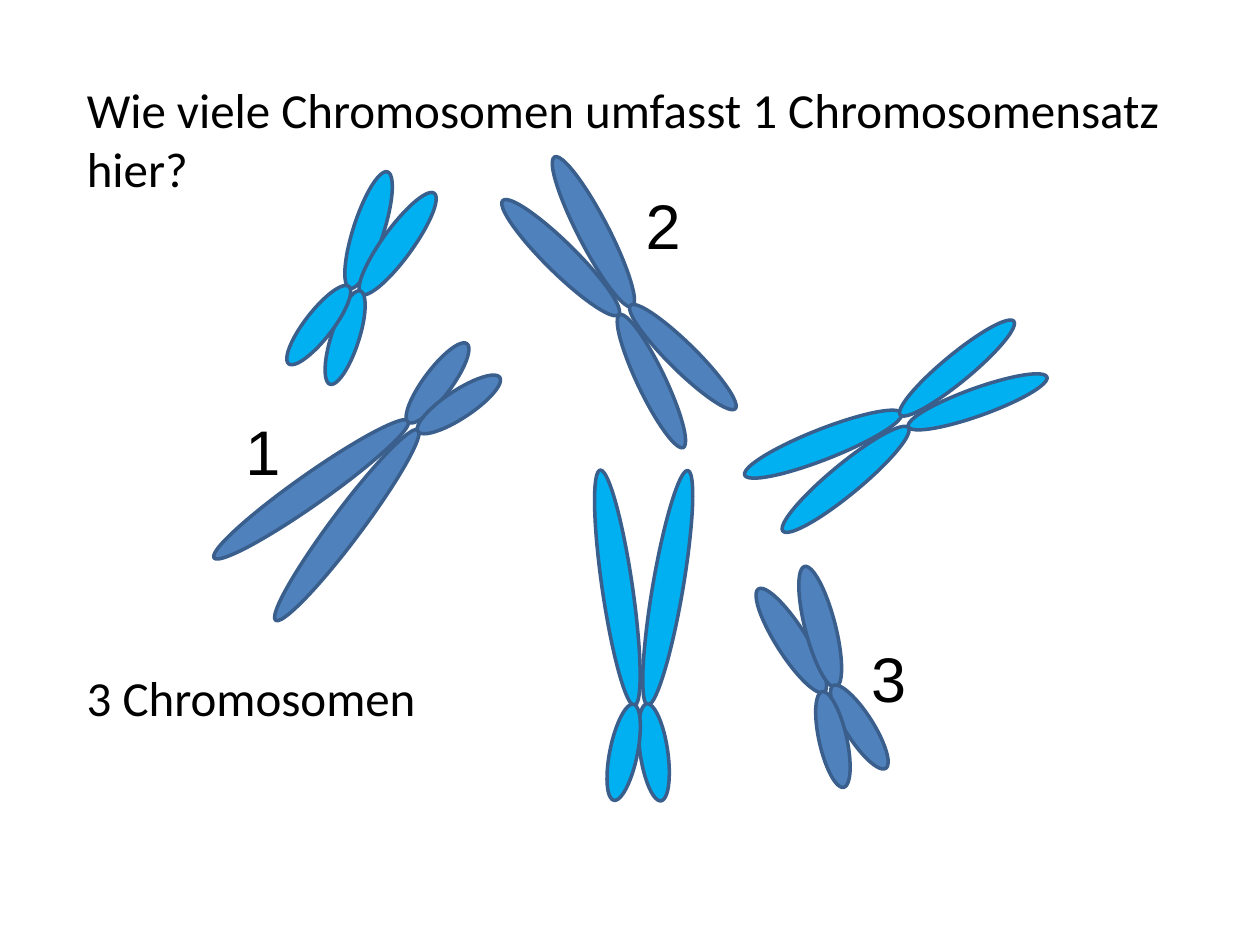
from math import cos, radians, sin

from pptx import Presentation
from pptx.dml.color import RGBColor
from pptx.enum import shapes, text
from pptx.util import Pt

COLOURS = {"dark": "4F81BD", "light": "00B0F0", "outline": "3A5F8C", "text": "000000"}

# Width and tilt shared by the four arms of every upright chromosome
ARM_WIDTHS = (17.3, 17.3, 15.8, 15.8)
ARM_TILTS = (-8.3, 9.7, -8.3, 11.5)

# Per chromosome type: arm centre (x, y) from the middle, and arm length
TYPES = {
    "long": ((-13.3, -47, 136), (15.5, -47, 136), (7.6, 47, 56), (-9.7, 47, 56)),
    "medium": ((-11, -43.6, 93), (12.8, -44.1, 96.5),
               (10.4, 43.8, 84.2), (-12.2, 43.9, 84.2)),
    "short": ((-8, -30.5, 70), (10.3, -30.9, 71.3), (7.2, 30.5, 56), (-9.5, 30.8, 56)),
}

# Type, colour, middle x, middle y, rotation
CHROMOSOMES = (
    ("long", "dark", 222.1, 257.4, 225.1),
    ("long", "light", 366.1, 382.9, 0),
    ("short", "dark", 472, 390.6, -24.2),
    ("short", "light", 204.3, 162.4, 26.3),
    ("medium", "dark", 355.5, 175.4, -37.1),
    ("medium", "light", 514.8, 241.9, -121.2),
)

BODY = {"name": "Calibri", "size": Pt(28)}
NUMBER = {"name": "Arial", "size": Pt(36)}

# Wording, left, top, width, height, format
TEXTS = (
    ("Wie viele Chromosomen umfasst 1 Chromosomensatz hier?", 42.5, 41.8, 635, 75, BODY),
    ("3 Chromosomen", 42.5, 378, 255, 41, BODY),
    ("1", 133.2, 232.4, 36, 48.6, NUMBER),
    ("2", 361.8, 103.2, 36, 48.6, NUMBER),
    ("3", 490.8, 362.1, 36, 48.6, NUMBER),
)


def rgb(key):
    return RGBColor.from_string(COLOURS[key])


def add_arm(page, x, y, width, length, rotation, colour):
    """Draw one chromosome arm centred on x, y."""
    arm = page.shapes.add_shape(
        shapes.MSO_SHAPE.OVAL,
        Pt(x - width / 2), Pt(y - length / 2), Pt(width), Pt(length))
    arm.rotation = rotation % 360
    arm.shadow.inherit = False
    arm.fill.solid()
    arm.fill.fore_color.rgb = rgb(colour)
    arm.line.color.rgb = rgb("outline")
    arm.line.width = Pt(2)


def add_chromosome(page, kind, colour, x, y, rotation):
    """Turn the four arms of a type about the chromosome's middle."""
    c, s = cos(radians(rotation)), sin(radians(rotation))
    for (dx, dy, length), width, tilt in zip(TYPES[kind], ARM_WIDTHS, ARM_TILTS):
        add_arm(page, x + dx * c - dy * s, y + dx * s + dy * c,
                width, length, rotation + tilt, colour)


def add_text(page, wording, left, top, width, height, style):
    box = page.shapes.add_textbox(Pt(left), Pt(top), Pt(width), Pt(height))
    frame = box.text_frame
    frame.word_wrap = True
    frame.auto_size = text.MSO_AUTO_SIZE.SHAPE_TO_FIT_TEXT
    span = frame.paragraphs[0].add_run()
    span.text = wording
    for attribute, value in style.items():
        setattr(span.font, attribute, value)
    span.font.color.rgb = rgb("text")


def main():
    deck = Presentation()
    deck.slide_width, deck.slide_height = Pt(720), Pt(540)
    page = deck.slides.add_slide(deck.slide_layouts[6])

    # Chromosomes
    for chromosome in CHROMOSOMES:
        add_chromosome(page, *chromosome)

    # Question, answer and numbers
    for entry in TEXTS:
        add_text(page, *entry)

    deck.save("out.pptx")


if __name__ == "__main__":
    main()
